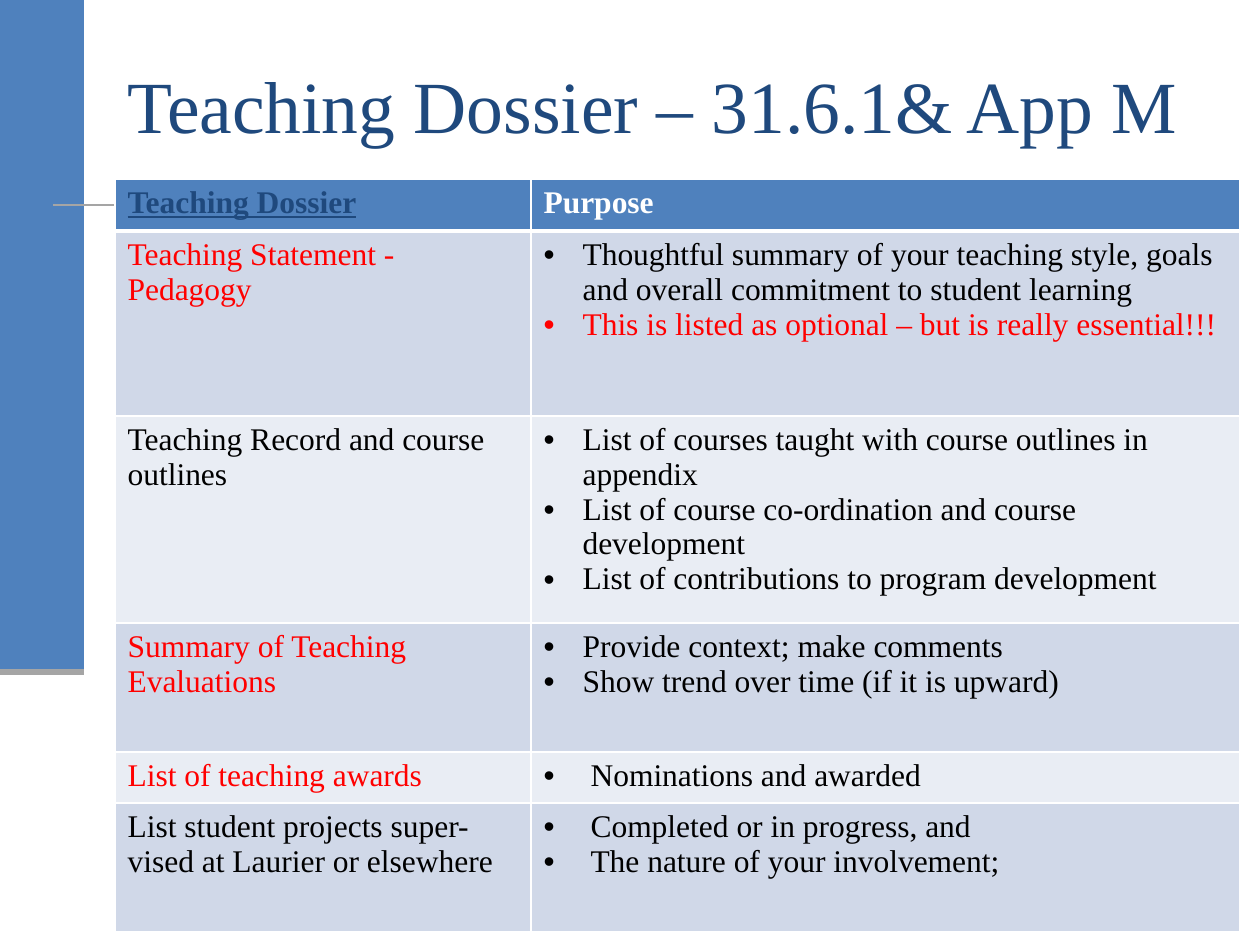
from lxml import etree
from pptx import Presentation
from pptx import util as u
from pptx.dml.color import RGBColor
from pptx.enum import shapes, text
from pptx.oxml.ns import qn

SCALE = 914400 / 126
FONT = "Times New Roman"
COLORS = {
    "blue": "4F81BD", "navy": "1F497D", "gray": "A5A5A5", "white": "FFFFFF",
    "black": "000000", "red": "FF0000", "dark_band": "D0D8E8", "light_band": "E9EDF4",
}
COLUMNS = [416, 709]
HEADER_HEIGHT = 52
HEADINGS = [("Teaching Dossier", "navy", True), ("Purpose", "white", False)]
ROWS = [
    (185, "Teaching Statement - Pedagogy", "red", 39, [
        ("Thoughtful summary of your teaching style, goals and overall commitment to student learning", "black"),
        ("This is listed as optional – but is really essential!!!", "red")]),
    (207, "Teaching Record and course outlines", "black", 39, [
        ("List of courses taught with course outlines in appendix", "black"),
        ("List of course co-ordination and course development", "black"),
        ("List of contributions to program development", "black")]),
    (129, "Summary of Teaching Evaluations", "red", 39, [
        ("Provide context; make comments", "black"),
        ("Show trend over time (if it is upward)", "black")]),
    (51, "List of teaching awards", "red", 47, [("Nominations and awarded", "black")]),
    (129, "List student projects super- vised at Laurier or elsewhere", "black", 47, [
        ("Completed or in progress, and", "black"),
        ("The nature of your involvement;", "black")]),
]


def px(length):
    """Turn pixels into EMU."""
    return u.Emu(round(length * SCALE))


def color(name):
    """Look up a named colour."""
    return RGBColor.from_string(COLORS[name])


def write(paragraph, words, size, color_name, bold=False, underline=False):
    """Fill a paragraph with text in one font."""
    paragraph.text = words
    font = paragraph.font
    font.name, font.size, font.bold, font.underline = FONT, u.Pt(size), bold, underline
    font.color.rgb = color(color_name)


def add_bullet(paragraph, indent):
    """Give a paragraph a hanging round bullet."""
    properties = paragraph._p.get_or_add_pPr()
    properties.set("marL", str(px(indent)))
    properties.set("indent", str(-px(indent)))
    etree.SubElement(properties, qn("a:buFont"), typeface="Arial")
    etree.SubElement(properties, qn("a:buChar"), char="•")


def style_cell(cell, fill_name, bottom_width=1):
    """Set the fill and white borders of a cell."""
    cell.fill.solid()
    cell.fill.fore_color.rgb = color(fill_name)
    properties = cell._tc.get_or_add_tcPr()
    widths = {"a:lnL": 1, "a:lnR": 1, "a:lnT": 1, "a:lnB": bottom_width}
    for position, (tag, width) in enumerate(widths.items()):
        border = etree.Element(qn(tag), w=str(u.Pt(width)))
        fill = etree.SubElement(border, qn("a:solidFill"))
        etree.SubElement(fill, qn("a:srgbClr"), val=COLORS["white"])
        properties.insert(position, border)


def add_rule(slide, left, top, width, weight):
    """Draw a horizontal gray line."""
    line = slide.shapes.add_connector(
        shapes.MSO_CONNECTOR.STRAIGHT, px(left), px(top), px(left + width), px(top))
    line.line.color.rgb = color("gray")
    line.line.width = u.Pt(weight)
    etree.SubElement(line._element.spPr, qn("a:effectLst"))


def add_side_band(slide, left, top, width, height):
    """Draw the blue band with its gray foot and the title rule."""
    band = slide.shapes.add_shape(
        shapes.MSO_SHAPE.RECTANGLE, px(left), px(top), px(width), px(height))
    band.shadow.inherit = False
    band.fill.solid()
    band.fill.fore_color.rgb = color("blue")
    band.line.fill.background()
    add_rule(slide, left + 53, top + 205, 1144, 1.5)
    add_rule(slide, left, top + height, width, 3.5)


def add_title(slide, left, top, width, height):
    """Place the slide title at the foot of its box."""
    frame = slide.shapes.add_textbox(px(left), px(top), px(width), px(height)).text_frame
    frame.word_wrap = True
    frame.vertical_anchor = text.MSO_ANCHOR.BOTTOM
    write(frame.paragraphs[0], "Teaching Dossier – 31.6.1& App M", 42, "navy")


def add_dossier_table(slide, left, top):
    """Build the table of dossier parts and their purposes."""
    heights = [HEADER_HEIGHT] + [row[0] for row in ROWS]
    table = slide.shapes.add_table(
        len(heights), len(COLUMNS), px(left), px(top), px(sum(COLUMNS)), px(sum(heights))).table
    for column, width in zip(table.columns, COLUMNS):
        column.width = px(width)
    for row, height in zip(table.rows, heights):
        row.height = px(height)
    for index, (words, color_name, underline) in enumerate(HEADINGS):
        cell = table.cell(0, index)
        style_cell(cell, "blue", 3)
        write(cell.text_frame.paragraphs[0], words, 18, color_name, True, underline)
    for index, (_, part, part_color, indent, purposes) in enumerate(ROWS, 1):
        part_cell, purpose_cell = table.cell(index, 0), table.cell(index, 1)
        for cell in (part_cell, purpose_cell):
            style_cell(cell, "dark_band" if index % 2 else "light_band")
        write(part_cell.text_frame.paragraphs[0], part, 18, part_color)
        frame = purpose_cell.text_frame
        for number, (words, color_name) in enumerate(purposes):
            paragraph = frame.add_paragraph() if number else frame.paragraphs[0]
            add_bullet(paragraph, indent)
            write(paragraph, words, 18, color_name)


def main():
    """Build and save the slide."""
    presentation = Presentation()
    presentation.slide_width, presentation.slide_height = px(1260), px(945)
    slide = presentation.slides.add_slide(presentation.slide_layouts[6])
    add_side_band(slide, 0, 0, 84, 672)
    add_dossier_table(slide, 115, 179)
    add_title(slide, 115, 52, 1081, 102)
    presentation.save("out.pptx")


if __name__ == "__main__":
    main()
